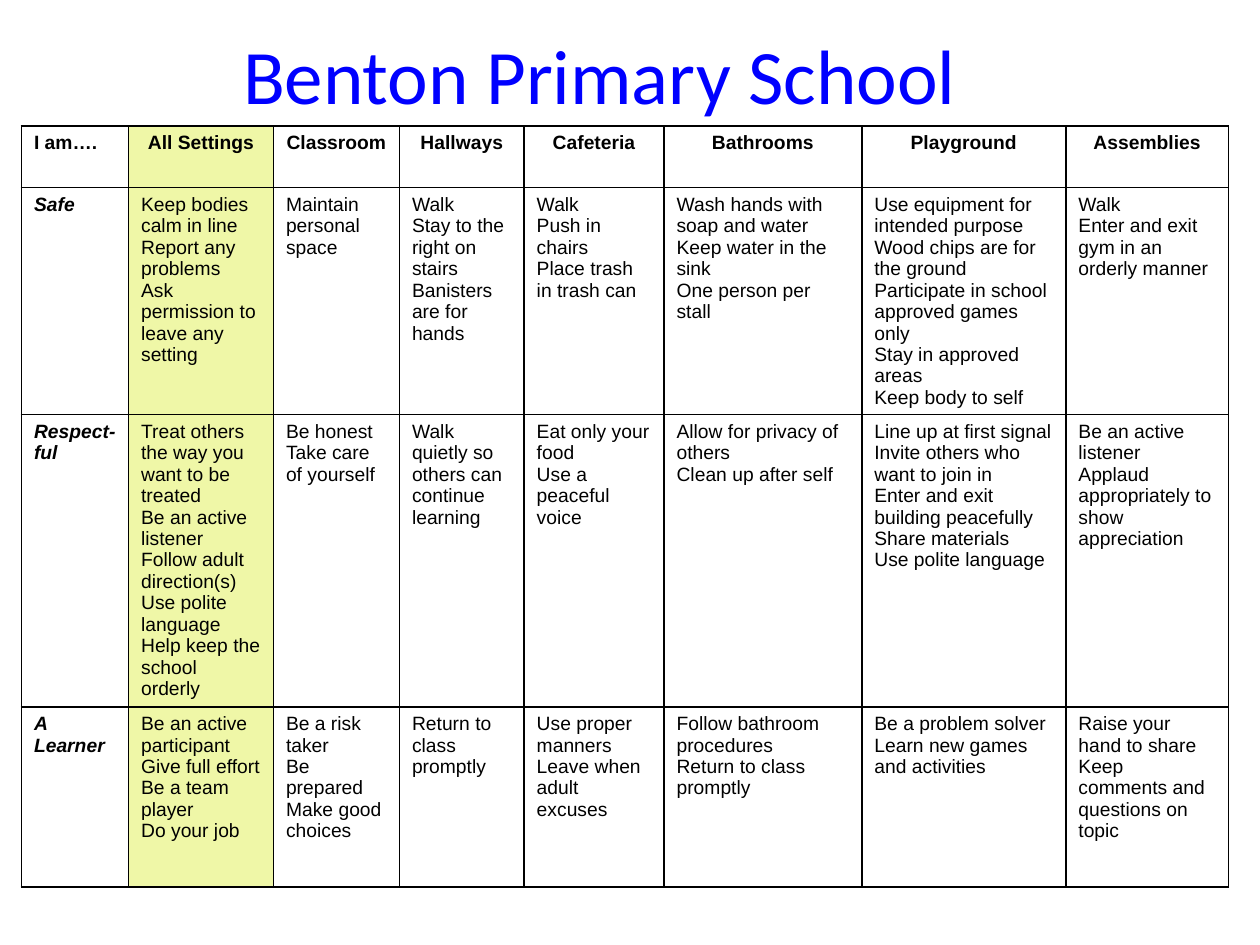
import pptx
import pptx.dml.color
import pptx.enum.text
import pptx.oxml
import pptx.oxml.ns
import pptx.util

CENTER = pptx.enum.text.PP_ALIGN.CENTER
LEFT = pptx.enum.text.PP_ALIGN.LEFT
MIDDLE = pptx.enum.text.MSO_ANCHOR.MIDDLE


def color(hex_text):
    return pptx.dml.color.RGBColor.from_string(hex_text)


class SlideMaker:
    """Holds the style and the current slide; places are shares of its size."""

    title_font = {"name": "Calibri", "size": pptx.util.Pt(44), "bold": False}
    cell_font = {"name": "Arial", "size": pptx.util.Pt(11), "bold": False, "italic": False}
    heading = {"bold": True}
    trait = {"bold": True, "italic": True}
    black, blue, highlight = "000000", "0000FF", "EFF7A7"

    def __init__(self, deck):
        self.deck = deck
        self.page = deck.slides.add_slide(deck.slide_layouts[6])

    def place(self, left, top, width, height):
        across, down = self.deck.slide_width, self.deck.slide_height
        return [round(share * side) for share, side in
                zip((left, top, width, height), (across, down, across, down))]

    def add_lines(self, frame, lines, font, ink, align=LEFT):
        for index, line in enumerate(lines):
            para = frame.paragraphs[0] if index == 0 else frame.add_paragraph()
            para.alignment = align
            span = para.add_run()
            span.text = line
            for key, value in font.items():
                setattr(span.font, key, value)
            span.font.color.rgb = color(ink)

    def title(self, text, area):
        frame = self.page.shapes.add_textbox(*self.place(*area)).text_frame
        frame.word_wrap = True
        frame.vertical_anchor = MIDDLE
        self.add_lines(frame, [text], self.title_font, self.blue, CENTER)

    def border(self, cell):
        properties = cell._tc.get_or_add_tcPr()
        for side in ("lnL", "lnR", "lnT", "lnB"):
            properties.append(pptx.oxml.parse_xml(
                f'<a:{side} {pptx.oxml.ns.nsdecls("a")} w="12700"><a:solidFill>'
                f'<a:srgbClr val="{self.black}"/></a:solidFill></a:{side}>'))

    def matrix(self, rows, area, column_shares, row_shares, marked_column):
        table = self.page.shapes.add_table(
            len(rows), len(rows[0]), *self.place(*area)).table
        table.first_row = table.horz_banding = False
        for column, share in zip(table.columns, column_shares):
            column.width = round(share * self.deck.slide_width)
        for row, share in zip(table.rows, row_shares):
            row.height = round(share * self.deck.slide_height)
        for r, row in enumerate(rows):
            for c, lines in enumerate(row):
                cell = table.cell(r, c)
                self.border(cell)
                if c == marked_column:
                    cell.fill.solid()
                    cell.fill.fore_color.rgb = color(self.highlight)
                else:
                    cell.fill.background()
                emphasis = self.heading if r == 0 else self.trait if c == 0 else {}
                align = CENTER if r == 0 and c > 0 else LEFT
                self.add_lines(cell.text_frame, lines, {**self.cell_font, **emphasis},
                               self.black, align)


# Each cell is a list of paragraphs
HEADINGS = [[name] for name in (
    "I am….", "All Settings", "Classroom", "Hallways", "Cafeteria",
    "Bathrooms", "Playground", "Assemblies")]
SAFE = [
    ["Safe"],
    ["Keep bodies calm in line", "Report any problems",
     "Ask permission to leave any setting"],
    ["Maintain personal space"],
    ["Walk", "Stay to the right on stairs", "Banisters are for hands"],
    ["Walk", "Push in chairs", "Place trash in trash can"],
    ["Wash hands with soap and water", "Keep water in the sink", "One person per stall"],
    ["Use equipment for intended purpose", "Wood chips are for the ground",
     "Participate in school approved games only", "Stay in approved areas",
     "Keep body to self"],
    ["Walk", "Enter and exit gym in an orderly manner"],
]
RESPECTFUL = [
    ["Respect-", "ful"],
    ["Treat others the way you want to be treated", "Be an active listener",
     "Follow adult direction(s)", "Use polite language", "Help keep the school orderly"],
    ["Be honest", "Take care of yourself"],
    ["Walk quietly so others can continue learning"],
    ["Eat only your food", "Use a peaceful voice"],
    ["Allow for privacy of others", "Clean up after self"],
    ["Line up at first signal", "Invite others who want to join in",
     "Enter and exit building peacefully", "Share materials", "Use polite language"],
    ["Be an active listener", "Applaud appropriately to show appreciation"],
]
LEARNER = [
    ["A Learner"],
    ["Be an active participant", "Give full effort", "Be a team player", "Do your job"],
    ["Be a risk taker", "Be prepared", "Make good choices"],
    ["Return to class promptly"],
    ["Use proper manners", "Leave when adult excuses"],
    ["Follow bathroom procedures", "Return to class promptly"],
    ["Be a problem solver", "Learn new games and activities"],
    ["Raise your hand to share", "Keep comments and questions on topic"],
]


def main():
    deck = pptx.Presentation()
    deck.slide_width = pptx.util.Inches(10)
    deck.slide_height = pptx.util.Inches(7.5)
    maker = SlideMaker(deck)

    # Behaviour matrix: settings across, traits down
    column_shares = [inches / 10 for inches in
                     (0.85, 1.15, 1, 0.99, 1.11, 1.57, 1.62, 1.29)]
    row_shares = [inches / 7.5 for inches in (0.49, 1.8, 2.32, 1.43)]
    maker.matrix([HEADINGS, SAFE, RESPECTFUL, LEARNER],
                 (0.017, 1 / 7.5, sum(column_shares), sum(row_shares)),
                 column_shares, row_shares, marked_column=1)

    # School name
    maker.title("Benton Primary School ", (0.058, 0.17 / 7.5, 0.85, 0.83 / 7.5))

    deck.save("out.pptx")


if __name__ == "__main__":
    main()
